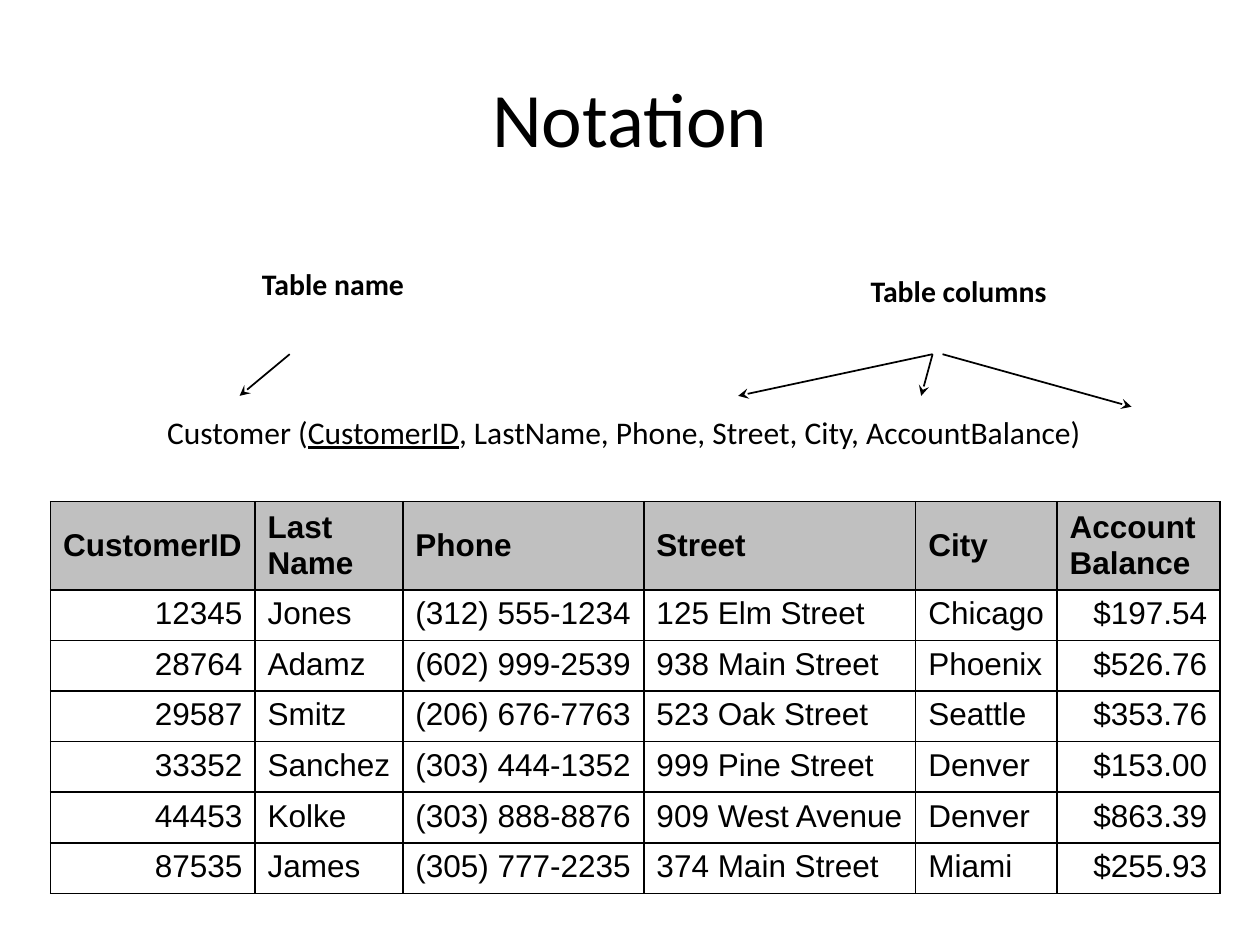
from lxml import etree
from pptx import Presentation
from pptx import util as u
from pptx.dml import color
from pptx.enum import shapes, text
from pptx.oxml import ns

BLACK, GRAY, WHITE = "000000", "C0C0C0", "FFFFFF"
LEFT, CENTER, RIGHT = text.PP_ALIGN.LEFT, text.PP_ALIGN.CENTER, text.PP_ALIGN.RIGHT
TOP, MIDDLE = text.MSO_ANCHOR.TOP, text.MSO_ANCHOR.MIDDLE

TITLE_FORMAT = {"name": "Calibri", "size": u.Pt(44)}
LABEL_FORMAT = {"name": "Calibri", "size": u.Pt(17), "bold": True}
SCHEMA_FORMAT = {"name": "Calibri", "size": u.Pt(18)}
KEY_FORMAT = {**SCHEMA_FORMAT, "underline": True}
CELL_FORMAT = {"name": "Arial", "size": u.Pt(18), "bold": False}
HEADER_FORMAT = {**CELL_FORMAT, "bold": True}

TEXTS = [
    ((1.27, 0.76, 22.86, 3.18), CENTER, MIDDLE, [("Notation", TITLE_FORMAT)]),
    ((5.03, 5.23, 3.56, 1.7), LEFT, TOP, [("Table name", LABEL_FORMAT)]),
    ((17.3, 5.38, 4.27, 1.7), LEFT, TOP, [("Table columns", LABEL_FORMAT)]),
    ((3.12, 8.2, 21.39, 1.02), LEFT, TOP, [
        ("Customer (", SCHEMA_FORMAT),
        ("CustomerID", KEY_FORMAT),
        (", LastName, Phone, Street, City, AccountBalance)", SCHEMA_FORMAT),
    ]),
]

ARROWS = [
    ((5.84, 7.14), (4.83, 7.98)),
    ((18.8, 7.14), (14.88, 7.98)),
    ((19, 7.14), (22.81, 8.2)),
    ((18.8, 7.14), (18.57, 7.98)),
]

COLUMNS = [
    ("CustomerID", 4.12, RIGHT),
    ("Last Name", 2.98, LEFT),
    ("Phone", 4.86, LEFT),
    ("Street", 5.48, LEFT),
    ("City", 2.85, LEFT),
    ("Account\vBalance", 3.28, RIGHT),
]
CUSTOMERS = [
    ("12345", "Jones", "(312) 555-1234", "125 Elm Street", "Chicago", "$197.54"),
    ("28764", "Adamz", "(602) 999-2539", "938 Main Street", "Phoenix", "$526.76"),
    ("29587", "Smitz", "(206) 676-7763", "523 Oak Street", "Seattle", "$353.76"),
    ("33352", "Sanchez", "(303) 444-1352", "999 Pine Street", "Denver", "$153.00"),
    ("44453", "Kolke", "(303) 888-8876", "909 West Avenue", "Denver", "$863.39"),
    ("87535", "James", "(305) 777-2235", "374 Main Street", "Miami", "$255.93"),
]
TABLE_LEFT, TABLE_TOP = 1.02, 10.11
HEADER_HEIGHT, ROW_HEIGHT = 1.78, 1.02


def rgb(value):
    return color.RGBColor.from_string(value)


def format_run(run, values):
    for name, value in values.items():
        setattr(run.font, name, value)
    run.font.color.rgb = rgb(BLACK)


def add_text(slide, box, alignment, anchor, runs):
    frame = slide.shapes.add_textbox(*map(u.Cm, box)).text_frame
    frame.word_wrap = True
    frame.vertical_anchor = anchor
    paragraph = frame.paragraphs[0]
    paragraph.alignment = alignment
    for words, values in runs:
        run = paragraph.add_run()
        run.text = words
        format_run(run, values)


def add_arrow(slide, start, end):
    arrow = slide.shapes.add_connector(
        shapes.MSO_CONNECTOR.STRAIGHT, *map(u.Cm, start + end))
    arrow.line.color.rgb = rgb(BLACK)
    arrow.line.width = u.Pt(1)
    etree.SubElement(arrow.line._get_or_add_ln(), ns.qn("a:tailEnd"), type="stealth")
    etree.SubElement(arrow._element.spPr, ns.qn("a:effectLst"))


def add_borders(cell):
    properties = cell._tc.get_or_add_tcPr()
    for index, side in enumerate(("lnL", "lnR", "lnT", "lnB")):
        line = etree.Element(ns.qn(f"a:{side}"), w=str(u.Pt(1)))
        fill = etree.SubElement(line, ns.qn("a:solidFill"))
        etree.SubElement(fill, ns.qn("a:srgbClr"), val=BLACK)
        properties.insert(index, line)


def fill_cell(cell, words, alignment, anchor, background, values):
    cell.text = words
    cell.vertical_anchor = anchor
    cell.fill.solid()
    cell.fill.fore_color.rgb = rgb(background)
    paragraph = cell.text_frame.paragraphs[0]
    paragraph.alignment = alignment
    for run in paragraph.runs:
        format_run(run, values)
    add_borders(cell)


def add_customer_table(slide):
    headings, widths, alignments = zip(*COLUMNS)
    heights = [HEADER_HEIGHT] + [ROW_HEIGHT] * len(CUSTOMERS)
    table = slide.shapes.add_table(
        len(heights), len(widths), u.Cm(TABLE_LEFT), u.Cm(TABLE_TOP),
        u.Cm(sum(widths)), u.Cm(sum(heights))).table
    table.first_row = table.horz_banding = False
    for column, width in zip(table.columns, widths):
        column.width = u.Cm(width)
    for row, height in zip(table.rows, heights):
        row.height = u.Cm(height)
    for index, heading in enumerate(headings):
        fill_cell(table.cell(0, index), heading, LEFT, MIDDLE, GRAY, HEADER_FORMAT)
    for row, customer in enumerate(CUSTOMERS, 1):
        for index, value in enumerate(customer):
            fill_cell(table.cell(row, index), value, alignments[index], TOP,
                      WHITE, CELL_FORMAT)


def main():
    presentation = Presentation()
    presentation.slide_width, presentation.slide_height = u.Cm(25.4), u.Cm(19.05)
    slide = presentation.slides.add_slide(presentation.slide_layouts[6])
    for content in TEXTS:
        add_text(slide, *content)
    for start, end in ARROWS:
        add_arrow(slide, start, end)
    add_customer_table(slide)
    presentation.save("out.pptx")


if __name__ == "__main__":
    main()
